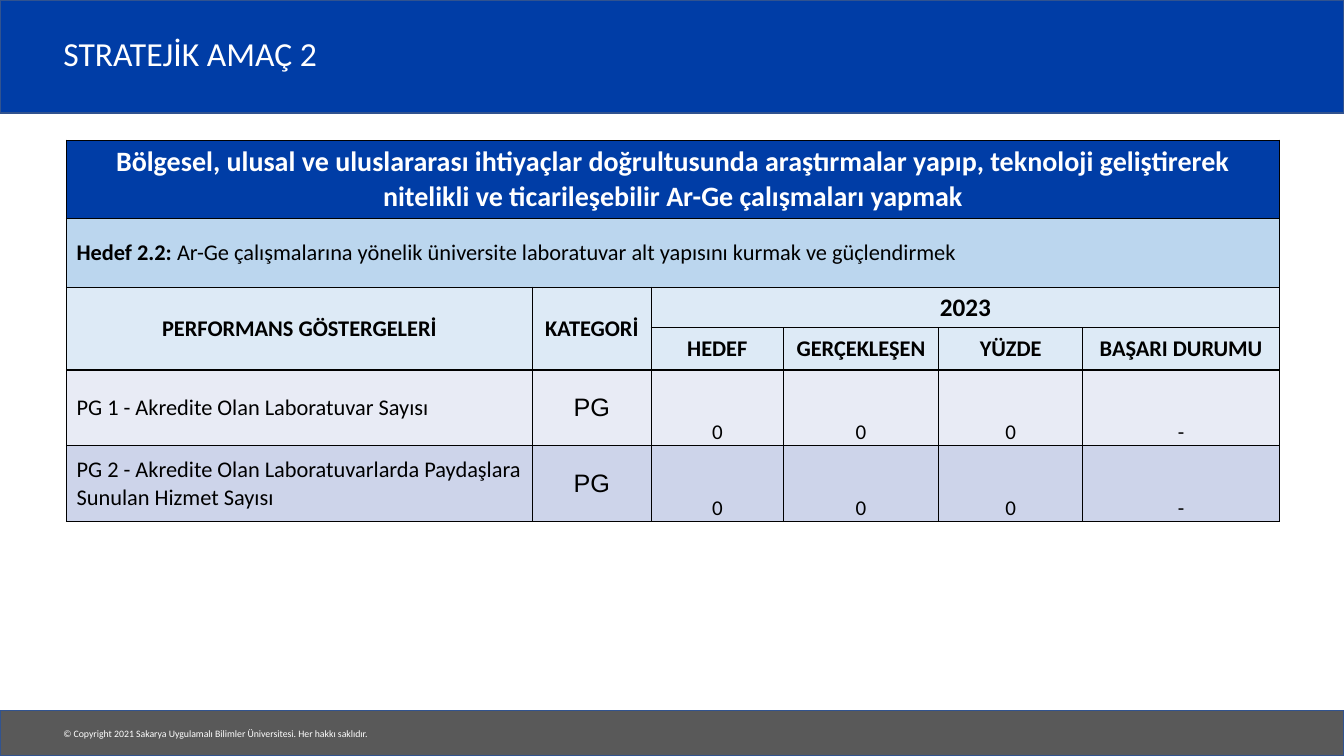
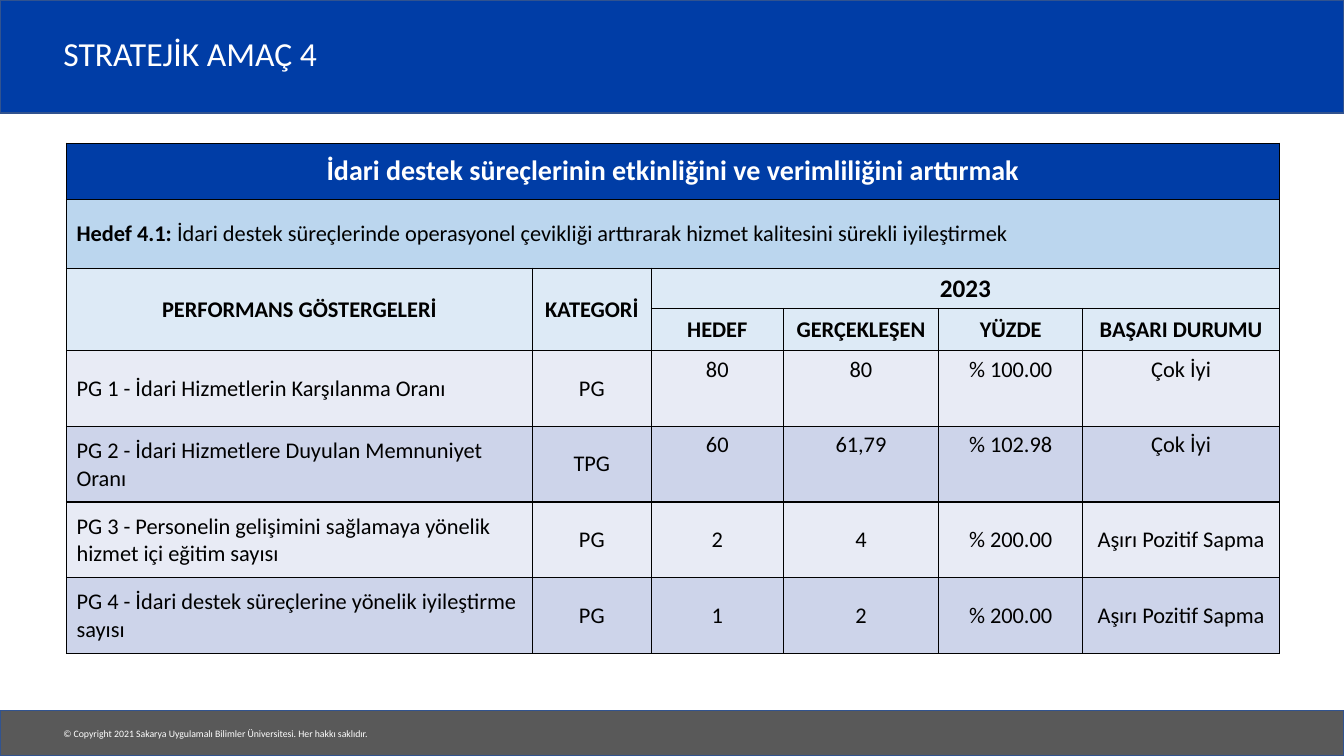
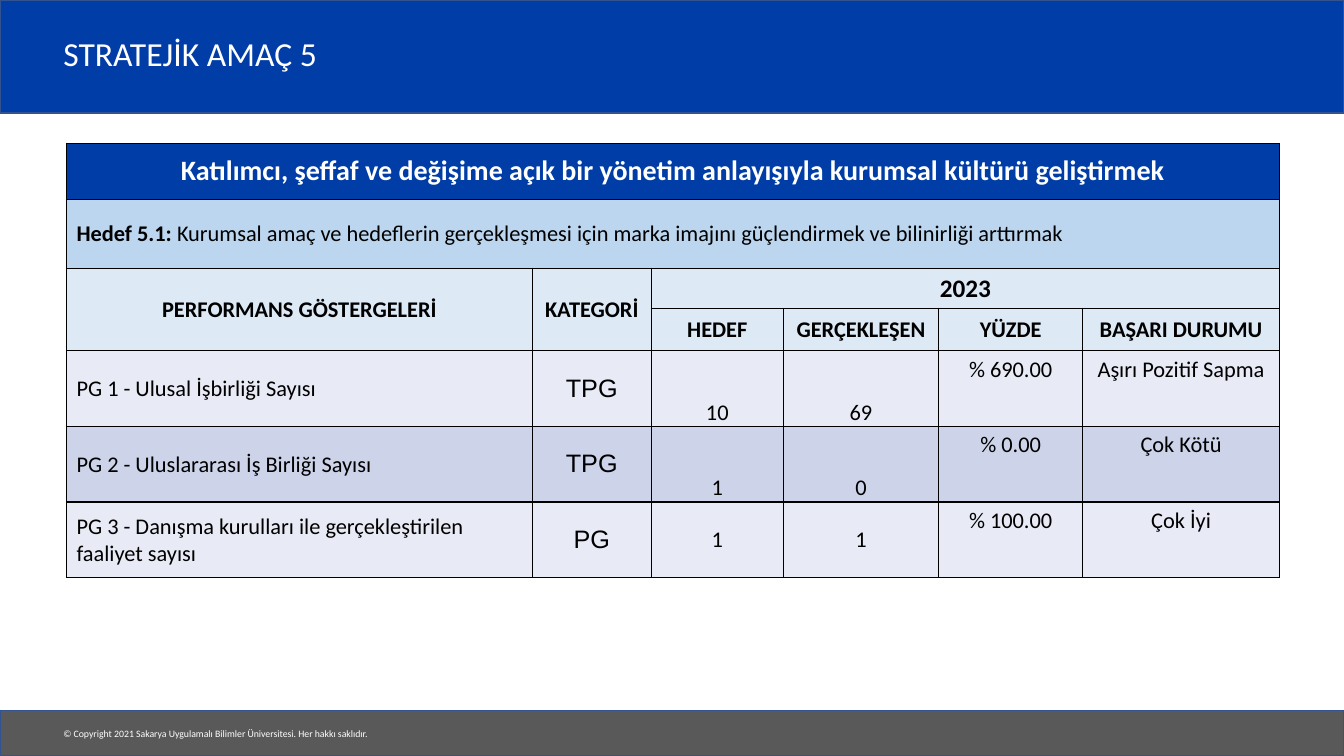
import pptx
import pptx.dml.color
import pptx.enum.shapes
import pptx.enum.text
import pptx.oxml
import pptx.oxml.ns
import pptx.util

Inches = pptx.util.Inches
Pt = pptx.util.Pt
ALIGN = pptx.enum.text.PP_ALIGN
ANCHOR = pptx.enum.text.MSO_ANCHOR

BLUE, GRAY, OUTLINE = "003DA6", "595959", "31538F"
WHITE, BLACK = "FFFFFF", "000000"
TARGET_FILL, HEADER_FILL = "BBD6EE", "DDEAF6"
ROW_FILLS = ["E8EBF5", "CDD4EA"]

COLUMNS = [4.62, 1.18, 1.31, 1.54, 1.43, 1.95]
HEADER_ROWS = [0.68, 0.4, 0.42]
ROW_HEIGHT = 0.75
VALUE_HEADERS = ["HEDEF", "GERÇEKLEŞEN", "YÜZDE", "BAŞARI DURUMU"]
COPYRIGHT = "© Copyright 2021 Sakarya Uygulamalı Bilimler Üniversitesi. Her hakkı saklıdır."

NORMAL = (0.1, 0.05, 0.1, 0.05)
LABEL = (0.1, 0.01, 0.01, 0)
TIGHT = (0.01, 0.01, 0.01, 0)
ANCHORS = {
    "t": (ANCHOR.TOP, NORMAL),
    "m": (ANCHOR.MIDDLE, NORMAL),
    "b": (ANCHOR.BOTTOM, TIGHT),
}

SLIDES = [
    {
        "title": "STRATEJİK AMAÇ 2",
        "top": 1.39,
        "goal_height": 0.78,
        "goal": "Bölgesel, ulusal ve uluslararası ihtiyaçlar doğrultusunda araştırmalar yapıp, "
                "teknoloji geliştirerek nitelikli ve ticarileşebilir Ar-Ge çalışmaları yapmak",
        "target": ("Hedef 2.2: ", "Ar-Ge çalışmalarına yönelik üniversite laboratuvar alt yapısını "
                                  "kurmak ve güçlendirmek"),
        "category_font": ("Arial", 18),
        "value_size": 15,
        "rows": [
            ("PG 1 - Akredite Olan Laboratuvar Sayısı", "PG", ["0", "0", "0", "-"], "bbbb"),
            ("PG 2 - Akredite Olan Laboratuvarlarda Paydaşlara Sunulan Hizmet Sayısı", "PG",
             ["0", "0", "0", "-"], "bbbb"),
        ],
    },
    {
        "title": "STRATEJİK AMAÇ 4",
        "top": 1.42,
        "goal_height": 0.56,
        "goal": "İdari destek süreçlerinin etkinliğini ve verimliliğini arttırmak",
        "target": ("Hedef 4.1: ", "İdari destek süreçlerinde operasyonel çevikliği arttırarak "
                                  "hizmet kalitesini sürekli iyileştirmek"),
        "category_font": ("Calibri", 16),
        "value_size": 16,
        "rows": [
            ("PG 1 - İdari Hizmetlerin Karşılanma Oranı", "PG",
             ["80", "80", "% 100.00", "Çok İyi"], "tttt"),
            ("PG 2 - İdari Hizmetlere Duyulan Memnuniyet Oranı", "TPG",
             ["60", "61,79", "% 102.98", "Çok İyi"], "tttt"),
            ("PG 3 - Personelin gelişimini sağlamaya yönelik hizmet içi eğitim sayısı", "PG",
             ["2", "4", "% 200.00", "Aşırı Pozitif Sapma"], "mmmm"),
            ("PG 4 - İdari destek süreçlerine yönelik iyileştirme sayısı", "PG",
             ["1", "2", "% 200.00", "Aşırı Pozitif Sapma"], "mmmm"),
        ],
    },
    {
        "title": "STRATEJİK AMAÇ 5",
        "top": 1.42,
        "goal_height": 0.56,
        "goal": "Katılımcı, şeffaf ve değişime açık bir yönetim anlayışıyla kurumsal kültürü "
                "geliştirmek",
        "target": ("Hedef 5.1: ", "Kurumsal amaç ve hedeflerin gerçekleşmesi için marka imajını "
                                  "güçlendirmek ve bilinirliği arttırmak"),
        "category_font": ("Arial", 18),
        "value_size": 16,
        "rows": [
            ("PG 1 - Ulusal İşbirliği Sayısı", "TPG",
             ["10", "69", "% 690.00", "Aşırı Pozitif Sapma"], "bbtt"),
            ("PG 2 - Uluslararası İş Birliği Sayısı", "TPG",
             ["1", "0", "% 0.00", "Çok Kötü"], "bbtt"),
            ("PG 3 - Danışma kurulları ile gerçekleştirilen faaliyet sayısı", "PG",
             ["1", "1", "% 100.00", "Çok İyi"], "mmtt"),
        ],
    },
]


def rgb(color):
    return pptx.dml.color.RGBColor.from_string(color)


def add_run(p, text, size, color=BLACK, bold=False, font="Calibri"):
    r = p.add_run()
    r.text = text
    r.font.name = font
    r.font.size = Pt(size)
    r.font.bold = bold
    r.font.color.rgb = rgb(color)


def add_band(s, top, height, color):
    sp = s.shapes.add_shape(pptx.enum.shapes.MSO_SHAPE.RECTANGLE,
                            0, Inches(top), Inches(13.33), Inches(height))
    sp.shadow.inherit = False
    sp.fill.solid()
    sp.fill.fore_color.rgb = rgb(color)
    sp.line.color.rgb = rgb(OUTLINE)
    sp.line.width = Pt(1)


def add_text(s, box, text, size, anchor):
    sp = s.shapes.add_textbox(*[Inches(v) for v in box])
    tf = sp.text_frame
    tf.word_wrap = True
    tf.vertical_anchor = anchor
    add_run(tf.paragraphs[0], text, size, WHITE)
    return tf


def add_frame(s, title):
    add_band(s, 0, 1.12, BLUE)
    add_band(s, 7.05, 0.45, GRAY)
    add_text(s, (0.53, 7.17, 3.29, 0.22), COPYRIGHT, 7, ANCHOR.TOP)
    tf = add_text(s, (0.53, 0.19, 11.03, 0.73), title, 24, ANCHOR.MIDDLE)
    tf.paragraphs[0].line_spacing = 0.9


def style_cell(cell, fill):
    tcPr = cell._tc.get_or_add_tcPr()
    for side in "LRTB":
        tcPr.append(pptx.oxml.parse_xml(
            f'<a:ln{side} {pptx.oxml.ns.nsdecls("a")} w="12700"><a:solidFill>'
            f'<a:srgbClr val="{BLACK}"/></a:solidFill></a:ln{side}>'))
    cell.fill.solid()
    cell.fill.fore_color.rgb = rgb(fill)


def fill_cell(cell, text, size=16, align=ALIGN.CENTER, anchor=ANCHOR.MIDDLE,
              insets=NORMAL, **font):
    cell.vertical_anchor = anchor
    (cell.margin_left, cell.margin_top,
     cell.margin_right, cell.margin_bottom) = [Inches(v) for v in insets]
    p = cell.text_frame.paragraphs[0]
    p.alignment = align
    add_run(p, text, size, **font)
    return p


def add_headers(table, goal, target):
    for first, last in [((0, 0), (0, 5)), ((1, 0), (1, 5)), ((2, 0), (3, 0)),
                        ((2, 1), (3, 1)), ((2, 2), (2, 5))]:
        table.cell(*first).merge(table.cell(*last))
    fill_cell(table.cell(0, 0), goal, 20, color=WHITE, bold=True)
    p = fill_cell(table.cell(1, 0), target[0], align=ALIGN.LEFT, bold=True)
    add_run(p, target[1], 16)
    fill_cell(table.cell(2, 0), "PERFORMANS GÖSTERGELERİ", bold=True)
    fill_cell(table.cell(2, 1), "KATEGORİ", bold=True)
    fill_cell(table.cell(2, 2), "2023", 18, bold=True)
    for col, text in enumerate(VALUE_HEADERS, 2):
        fill_cell(table.cell(3, col), text, bold=True)


def add_indicators(table, rows, category_font, value_size):
    font, size = category_font
    for row, (label, category, values, anchors) in enumerate(rows, 4):
        fill_cell(table.cell(row, 0), label, align=ALIGN.LEFT, insets=LABEL)
        fill_cell(table.cell(row, 1), category, size, font=font)
        for col, (value, key) in enumerate(zip(values, anchors), 2):
            anchor, insets = ANCHORS[key]
            fill_cell(table.cell(row, col), value, value_size, anchor=anchor, insets=insets)


def add_goal_table(s, data):
    rows = data["rows"]
    heights = [data["goal_height"]] + HEADER_ROWS + [ROW_HEIGHT] * len(rows)
    fills = [BLUE, TARGET_FILL, HEADER_FILL, HEADER_FILL]
    fills += [ROW_FILLS[i % 2] for i in range(len(rows))]
    table = s.shapes.add_table(len(heights), len(COLUMNS), Inches(0.66), Inches(data["top"]),
                               Inches(sum(COLUMNS)), Inches(sum(heights))).table
    table.first_row = table.horz_banding = False
    for column, width in zip(table.columns, COLUMNS):
        column.width = Inches(width)
    for row, height, fill in zip(table.rows, heights, fills):
        row.height = Inches(height)
        for cell in row.cells:
            style_cell(cell, fill)
    add_headers(table, data["goal"], data["target"])
    add_indicators(table, rows, data["category_font"], data["value_size"])


def main():
    prs = pptx.Presentation()
    prs.slide_width = Inches(13.33)
    prs.slide_height = Inches(7.5)
    for data in SLIDES:
        s = prs.slides.add_slide(prs.slide_layouts[6])
        add_frame(s, data["title"])
        add_goal_table(s, data)
    prs.save("out.pptx")


if __name__ == "__main__":
    main()
